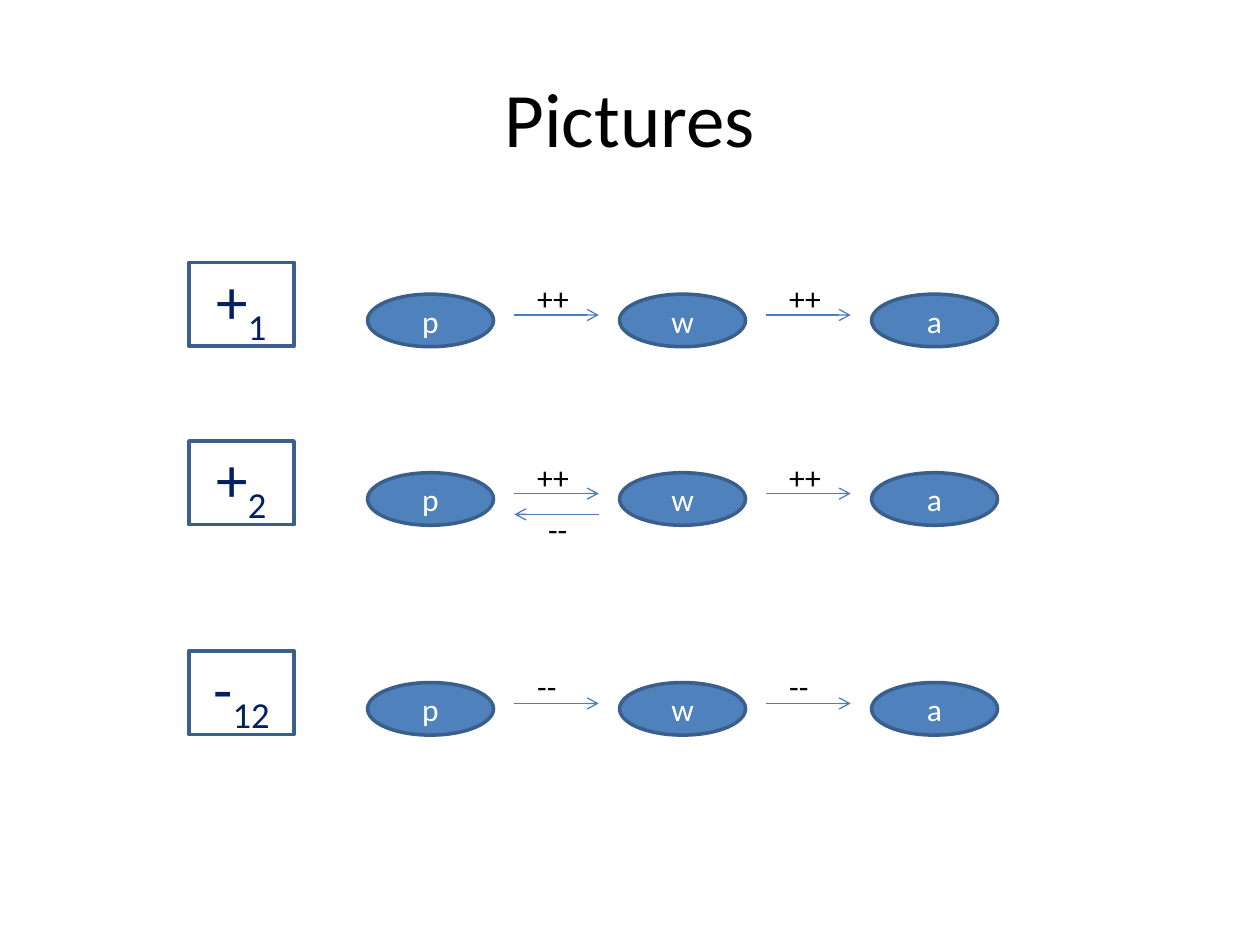
from lxml.etree import SubElement as Sub
from pptx import Presentation as Deck
from pptx.dml.color import RGBColor as RGB
from pptx.enum.shapes import MSO_CONNECTOR as Link, MSO_SHAPE as Kind
from pptx.enum.text import MSO_ANCHOR as Anchor, MSO_AUTO_SIZE as Auto, PP_ALIGN as Align
from pptx.oxml.ns import qn
from pptx.util import Cm, Pt

BLUE = RGB(0x4F, 0x81, 0xBD)
EDGE = RGB(0x3A, 0x5F, 0x8C)
WIRE = RGB(0x4B, 0x7E, 0xBC)
NAVY = RGB(0x00, 0x20, 0x60)
BLACK = RGB(0, 0, 0)
WHITE = RGB(255, 255, 255)

ROWS = [(5.29, "+", "1", "++"), (8.89, "+", "2", "++"), (13.12, "-", "12", "--")]
STEP = 5.08


class Board:
    """Hold the style and the current slide, and draw each kind of element."""

    font = "Calibri"

    def __init__(self, slide):
        self.slide = slide
        self.shapes = slide.shapes

    def run(self, para, text, size, color, base=None):
        run = para.add_run()
        run.text = text
        run.font.name = self.font
        run.font.size = Pt(size)
        run.font.color.rgb = color
        if base:
            run.font._element.set("baseline", str(base * 1000))

    def title(self, text):
        box = self.shapes.title
        box.left, box.top, box.width, box.height = Cm(1.27), Cm(0.76), Cm(22.86), Cm(3.18)
        frame = box.text_frame
        frame.vertical_anchor = Anchor.MIDDLE
        para = frame.paragraphs[0]
        para.alignment = Align.CENTER
        self.run(para, text, 44, BLACK)

    def shape(self, kind, x, y, w, h, fill=None):
        item = self.shapes.add_shape(kind, Cm(x), Cm(y), Cm(w), Cm(h))
        item.shadow.inherit = False
        if fill is None:
            item.fill.background()
        else:
            item.fill.solid()
            item.fill.fore_color.rgb = fill
        item.line.color.rgb = EDGE
        item.line.width = Pt(2)
        frame = item.text_frame
        frame.vertical_anchor = Anchor.MIDDLE
        para = frame.paragraphs[0]
        para.alignment = Align.CENTER
        return para

    def node(self, x, y, text):
        para = self.shape(Kind.OVAL, x, y, 2.54, 1.06, BLUE)
        self.run(para, text, 18, WHITE)

    def sign(self, y, mark, index):
        para = self.shape(Kind.RECTANGLE, 3.81, y, 2.12, 1.69)
        self.run(para, mark, 36, NAVY)
        self.run(para, index, 36, NAVY, -25)

    def label(self, x, y, text):
        box = self.shapes.add_textbox(Cm(x), Cm(y), Cm(1.48), Cm(1.02))
        frame = box.text_frame
        frame.word_wrap = True
        frame.auto_size = Auto.SHAPE_TO_FIT_TEXT
        self.run(frame.paragraphs[0], text, 18, BLACK)

    def arrow(self, start, end, y):
        link = self.shapes.add_connector(Link.STRAIGHT, Cm(start), Cm(y), Cm(end), Cm(y))
        link.line.color.rgb = WIRE
        link.line.width = Pt(0.75)
        props = link._element.spPr
        Sub(props.find(qn("a:ln")), qn("a:tailEnd"), type="arrow")
        Sub(props, qn("a:effectLst"))

    def row(self, y, mark, index, tag):
        self.sign(y, mark, index)
        for i, name in enumerate("pwa"):
            self.node(7.41 + i * STEP, y + 0.64, name)
        for i in range(2):
            shift = i * STEP
            self.arrow(10.37 + shift, 12.07 + shift, y + 1.06)
            self.label(10.58 + shift, y + 0.21, tag)


def main():
    deck = Deck()
    deck.slide_width, deck.slide_height = Cm(25.4), Cm(19.05)
    board = Board(deck.slides.add_slide(deck.slide_layouts[5]))
    board.title("Pictures")
    for row in ROWS:
        board.row(*row)
    board.arrow(12.07, 10.37, 10.37)
    board.label(10.8, 10.16, "--")
    deck.save("out.pptx")


if __name__ == "__main__":
    main()
